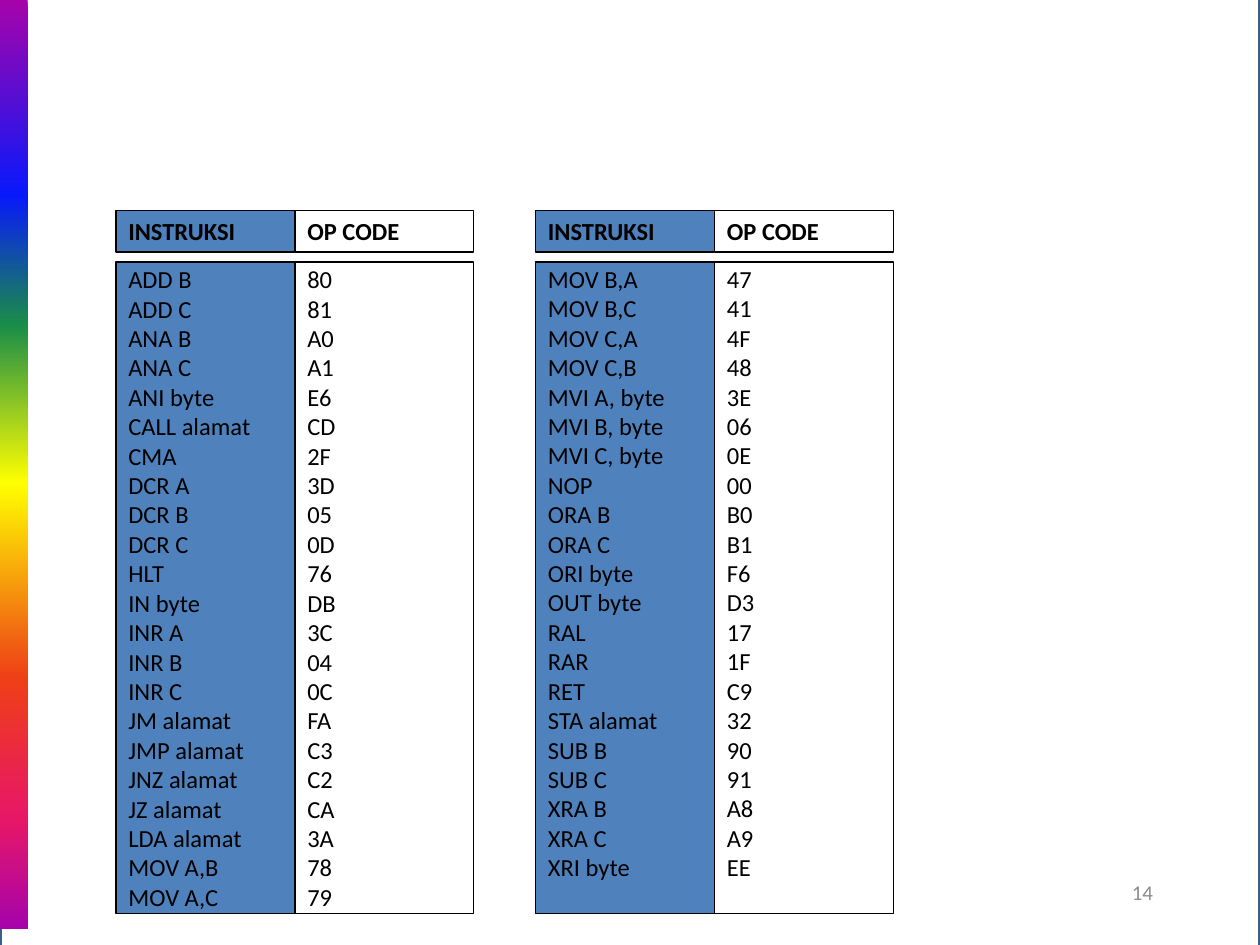
from lxml.etree import SubElement
from pptx import Presentation
from pptx.dml.color import RGBColor
from pptx.enum.shapes import MSO_SHAPE
from pptx.enum.text import MSO_ANCHOR, PP_ALIGN
from pptx.oxml.ns import qn
from pptx.util import Inches, Pt

COLORS = {
    "paper": "FFFFFF",
    "frame": "3A5F8C",
    "instruction": "4F81BD",
    "ink": "000000",
    "number": "8C8C8C",
}
RAINBOW = [
    (0, "A603AB"), (21, "0819FB"), (35, "1A8D48"), (52, "FFFF00"),
    (73, "EE3F17"), (88, "E81766"), (100, "A603AB"),
]
HEADINGS = ("INSTRUKSI", "OP CODE")
OPCODES = [
    [
        ("ADD B", "80"), ("ADD C", "81"), ("ANA B", "A0"), ("ANA C", "A1"),
        ("ANI byte", "E6"), ("CALL alamat", "CD"), ("CMA", "2F"),
        ("DCR A", "3D"), ("DCR B", "05"), ("DCR C", "0D"), ("HLT", "76"),
        ("IN byte", "DB"), ("INR A", "3C"), ("INR B", "04"), ("INR C", "0C"),
        ("JM alamat", "FA"), ("JMP alamat", "C3"), ("JNZ alamat", "C2"),
        ("JZ alamat", "CA"), ("LDA alamat", "3A"), ("MOV A,B", "78"),
        ("MOV A,C", "79"),
    ],
    [
        ("MOV B,A", "47"), ("MOV B,C", "41"), ("MOV C,A", "4F"),
        ("MOV C,B", "48"), ("MVI A, byte", "3E"), ("MVI B, byte", "06"),
        ("MVI C, byte", "0E"), ("NOP", "00"), ("ORA B", "B0"),
        ("ORA C", "B1"), ("ORI byte", "F6"), ("OUT byte", "D3"),
        ("RAL", "17"), ("RAR", "1F"), ("RET", "C9"), ("STA alamat", "32"),
        ("SUB B", "90"), ("SUB C", "91"), ("XRA B", "A8"), ("XRA C", "A9"),
        ("XRI byte", "EE"),
    ],
]
PAGE_NUMBER = "14"

LEFT, COLUMN, GROUP_STEP = 0.92, 1.42, 3.33
HEADING_TOP, HEADING_HEIGHT = 1.67, 0.33
LIST_TOP, LIST_HEIGHT = 2.08, 5.17
INSET, LINE_HEIGHT = 0.05, 0.237
MOST_LINES = max(len(group) for group in OPCODES)


def color(name):
    return RGBColor.from_string(COLORS[name])


def add_box(slide, left, top, width, height, fill=None, line=None, weight=0.75):
    box = slide.shapes.add_shape(
        MSO_SHAPE.RECTANGLE, Inches(left), Inches(top), Inches(width), Inches(height))
    box.shadow.inherit = False
    if fill:
        box.fill.solid()
        box.fill.fore_color.rgb = color(fill)
    else:
        box.fill.background()
    if line:
        box.line.color.rgb = color(line)
        box.line.width = Pt(weight)
    else:
        box.line.fill.background()
    return box


def write_lines(frame, lines, size=14, ink="ink", bold=False, align=PP_ALIGN.LEFT):
    frame.vertical_anchor = MSO_ANCHOR.MIDDLE
    for index, words in enumerate(lines):
        paragraph = frame.add_paragraph() if index else frame.paragraphs[0]
        paragraph.alignment = align
        run = paragraph.add_run()
        run.text = words
        run.font.name = "Calibri"
        run.font.size = Pt(size)
        run.font.bold = bold
        run.font.color.rgb = color(ink)


def add_rainbow(slide):
    stripe = add_box(slide, 0, 0, 0.22, 7.37)
    stripe.fill.gradient()
    gradient = stripe._element.spPr.find(qn("a:gradFill"))
    for child in list(gradient):
        gradient.remove(child)
    stops = SubElement(gradient, qn("a:gsLst"))
    for percent, shade in RAINBOW:
        stop = SubElement(stops, qn("a:gs"), pos=str(percent * 1000))
        SubElement(stop, qn("a:srgbClr"), val=shade)
    SubElement(gradient, qn("a:lin"), ang="5400000", scaled="0")


def add_column(slide, left, heading, entries, fill):
    parts = [
        ([heading], HEADING_TOP, HEADING_HEIGHT, True, 0),
        (entries, LIST_TOP, LIST_HEIGHT, False, MOST_LINES - len(entries)),
    ]
    for lines, top, height, bold, missing in parts:
        frame = add_box(slide, left, top, COLUMN, height, fill, "ink").text_frame
        frame.word_wrap = False
        frame.margin_bottom = Inches(INSET + missing * LINE_HEIGHT)
        write_lines(frame, lines, bold=bold)


def main():
    deck = Presentation()
    deck.slide_width, deck.slide_height = Inches(10), Inches(7.5)
    slide = deck.slides.add_slide(deck.slide_layouts[6])

    add_box(slide, 0, -0.11, 10, 7.8, "paper", "frame", 2)
    add_rainbow(slide)

    number = slide.shapes.add_textbox(
        Inches(7.17), Inches(6.83), Inches(2.08), Inches(0.5)).text_frame
    number.word_wrap = True
    write_lines(number, [PAGE_NUMBER], 12, "number", align=PP_ALIGN.RIGHT)

    for group_index, group in enumerate(OPCODES):
        group_left = LEFT + group_index * GROUP_STEP
        columns = zip(HEADINGS, zip(*group), ("instruction", None))
        for index, (heading, entries, fill) in enumerate(columns):
            add_column(slide, group_left + index * COLUMN, heading, entries, fill)

    deck.save("out.pptx")


if __name__ == "__main__":
    main()
